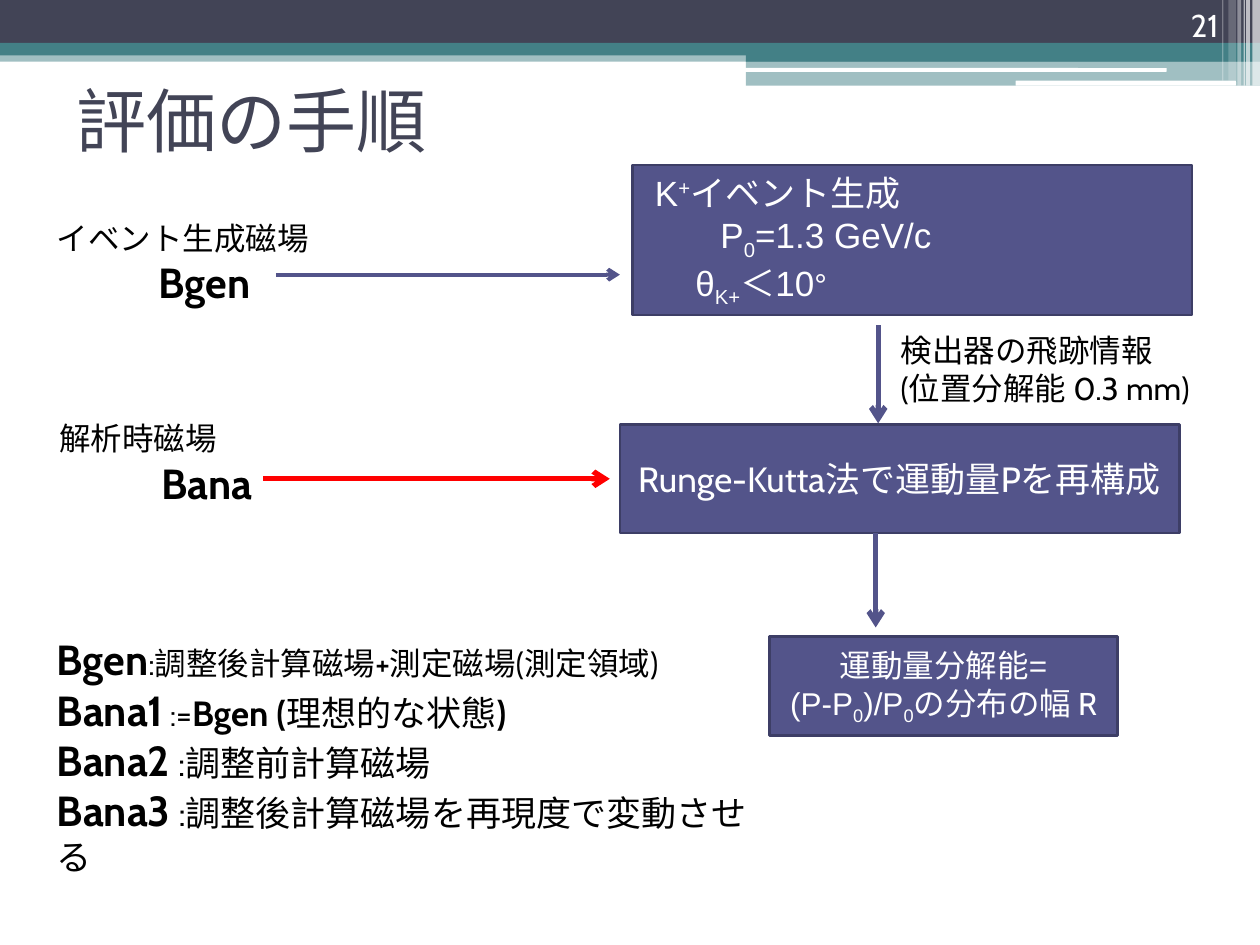
from lxml.etree import SubElement as Sub
from pptx import Presentation
from pptx.dml.color import RGBColor as RGB
from pptx.enum.shapes import MSO_CONNECTOR as LINK, MSO_SHAPE as FORM
from pptx.enum.text import MSO_ANCHOR as ANCHOR, MSO_AUTO_SIZE as FIT, PP_ALIGN as ALIGN
from pptx.oxml.ns import qn
from pptx.util import Inches, Pt

HUES = {"dark": "424456", "teal": "438086", "white": "FFFFFF", "black": "000000",
        "box": "53548A", "edge": "3D3E66", "red": "FF0000"}
SUB, SUP = {"base": -25}, {"base": 30}
BIG = {"size": 24, "bold": True}
MID = {"size": 20}
BOLD = {"size": 20, "bold": True}

BANDS = [
    (FORM.RECTANGLE, 0, 0.4, 10, 0.09, "teal", 50),
    (FORM.RECTANGLE, 0, 0, 10, 0.34, "dark", 100),
    (FORM.RECTANGLE, 0, 0.34, 10, 0.1, "teal", 100),
    (FORM.RECTANGLE, 5.92, 0.39, 4.08, 0.1, "teal", 100),
    (FORM.RECTANGLE, 5.92, 0.48, 4.08, 0.2, "teal", 50),
    (FORM.ROUNDED_RECTANGLE, 5.91, 0.54, 3.35, 0.03, "white", 100),
    (FORM.ROUNDED_RECTANGLE, 8.06, 0.64, 1.75, 0.04, "white", 100),
]
STRIPES = [(9.94, 0.06, 0.68, 65), (9.89, 0.03, 0.68, 65), (9.87, 0.01, 0.68, 60),
           (9.82, 0.03, 0.68, 40), (9.75, 0.06, 0.64, 20), (9.7, 0.01, 0.64, 30)]

EVENT = [
    (0.08, [("K", {}), ("+", SUP), ("イベント生成", {})]),
    (0.6, [("P", {}), ("0", SUB), ("=1.3 GeV/c", {})]),
    (0.4, [("θ", {}), ("K+", SUB), ("＜10", {}), ("°", {"size": 18})]),
]
WIDTH = [
    (0, [("運動量分解能=", {})]),
    (0, [("(P-P", {}), ("0", SUB), (")/P", {}), ("0", SUB),
         ("の分布の幅 R", {"name": "Cabin"})]),
]
FIELDS = [
    (0, [("Bgen", BIG), (":調整後計算磁場+測定磁場(測定領域)", {})]),
    (0, [("Bana1", BIG), (" :=", {}), ("Bgen (", BOLD), ("理想的な状態", MID), (")", BOLD)]),
    (0, [("Bana2", BIG), (" :調整前計算磁場", MID)]),
    (0, [("Bana3", BIG), (" :調整後計算磁場を再現度で変動させる", MID)]),
]


def plain(text):
    return [(0, [(text, {})])]


def tint(fill, hue, alpha=100):
    fill.solid()
    fill.fore_color.rgb = RGB.from_string(HUES[hue])
    if alpha < 100:
        node = fill._xPr.find(qn("a:solidFill"))[0]
        Sub(node, qn("a:alpha")).set("val", str(alpha * 1000))


def place(item, *spot):
    for key, val in zip(("left", "top", "width", "height"), spot):
        setattr(item, key, Inches(val))


def style(run, form):
    font = run.font
    tint(font.fill, form["hue"])
    for key in ("name", "bold"):
        setattr(font, key, form[key])
    font.size = Pt(form["size"])
    if form["base"]:
        run._r.get_or_add_rPr().set("baseline", str(form["base"] * 1000))


def write(item, paras, anchor=ANCHOR.TOP, aligns=(ALIGN.LEFT,), **form):
    base = {"name": "Cabin", "size": 18, "bold": False, "hue": "black", "base": 0} | form
    frame = item.text_frame
    for key, val in {"word_wrap": True, "auto_size": FIT.NONE,
                     "vertical_anchor": anchor}.items():
        setattr(frame, key, val)
    for i, (dent, runs) in enumerate(paras):
        para = frame.add_paragraph() if i else frame.paragraphs[0]
        para.alignment = aligns[i % len(aligns)]
        para.space_before = Pt(0)
        props = para._p.get_or_add_pPr()
        props.set("marL", str(Inches(dent)))
        props.set("indent", "0")
        Sub(props, qn("a:buNone"))
        for text, extra in runs:
            run = para.add_run()
            run.text = text
            style(run, base | extra)


def band(slide, form, x, y, w, h, hue, alpha):
    item = slide.shapes.add_shape(form, *map(Inches, (x, y, w, h)))
    item.shadow.inherit = False
    tint(item.fill, hue, alpha)
    item.line.fill.background()
    return item


def box(slide, spot, paras, **form):
    item = band(slide, FORM.RECTANGLE, *spot, "box", 100)
    tint(item.line.fill, "edge")
    item.line.width = Pt(1.5)
    write(item, paras, ANCHOR.MIDDLE, hue="white", **form)


def label(slide, spot, paras, **form):
    item = slide.shapes.add_textbox(*map(Inches, spot))
    write(item, paras, **form)


def arrow(slide, ends, hue="box", size=3):
    item = slide.shapes.add_connector(LINK.STRAIGHT, *map(Inches, ends))
    tint(item.line.fill, hue)
    item.line.width = Pt(size)
    Sub(item.line._get_or_add_ln(), qn("a:tailEnd")).set("type", "arrow")
    Sub(item._element.spPr, qn("a:effectLst"))


def main():
    deck = Presentation()
    deck.slide_width, deck.slide_height = Inches(10), Inches(7.5)
    slide = deck.slides.add_slide(deck.slide_layouts[1])
    title, body = slide.placeholders

    for spec in BANDS:
        band(slide, *spec)
    for x, w, h, alpha in STRIPES:
        band(slide, FORM.RECTANGLE, x, 0, w, h, "white", alpha)

    place(title, 0.51, 0.36, 9, 1.17)
    write(title, plain("評価の手順"), ANCHOR.MIDDLE, size=40, hue="dark")
    place(body, 0.35, 4.98, 5.91, 2.05)
    write(body, FIELDS)

    mid = (ALIGN.CENTER,)
    box(slide, (5.02, 1.31, 4.44, 1.19), EVENT, name="Arial", size=20)
    box(slide, (4.92, 3.37, 4.44, 0.86), plain("Runge-Kutta法で運動量Pを再構成"),
        aligns=mid, size=20)
    box(slide, (6.11, 5.05, 2.76, 0.79), WIDTH, aligns=mid, name="Arial")

    arrow(slide, (2.19, 2.18, 4.92, 2.18), size=2.25)
    arrow(slide, (2.09, 3.8, 4.84, 3.8), "red")
    arrow(slide, (6.97, 2.58, 6.97, 3.36))
    arrow(slide, (6.95, 4.23, 6.95, 4.98))

    for x, y, head, name in ((0.35, 1.69, "イベント生成磁場", "Bgen"),
                             (0.37, 3.28, "解析時磁場", "Bana")):
        label(slide, (x, y, 2.55, 0.81), plain(head) + [(0, [(name, BIG)])],
              aligns=(ALIGN.LEFT, ALIGN.CENTER))
    label(slide, (7.05, 2.58, 2.9, 0.71),
          plain("検出器の飛跡情報") + plain("(位置分解能 0.3 mm)"))
    label(slide, (8.94, 0, 0.83, 0.4), plain("21"), anchor=ANCHOR.BOTTOM,
          aligns=(ALIGN.RIGHT,), hue="white")

    deck.save("out.pptx")


if __name__ == "__main__":
    main()
